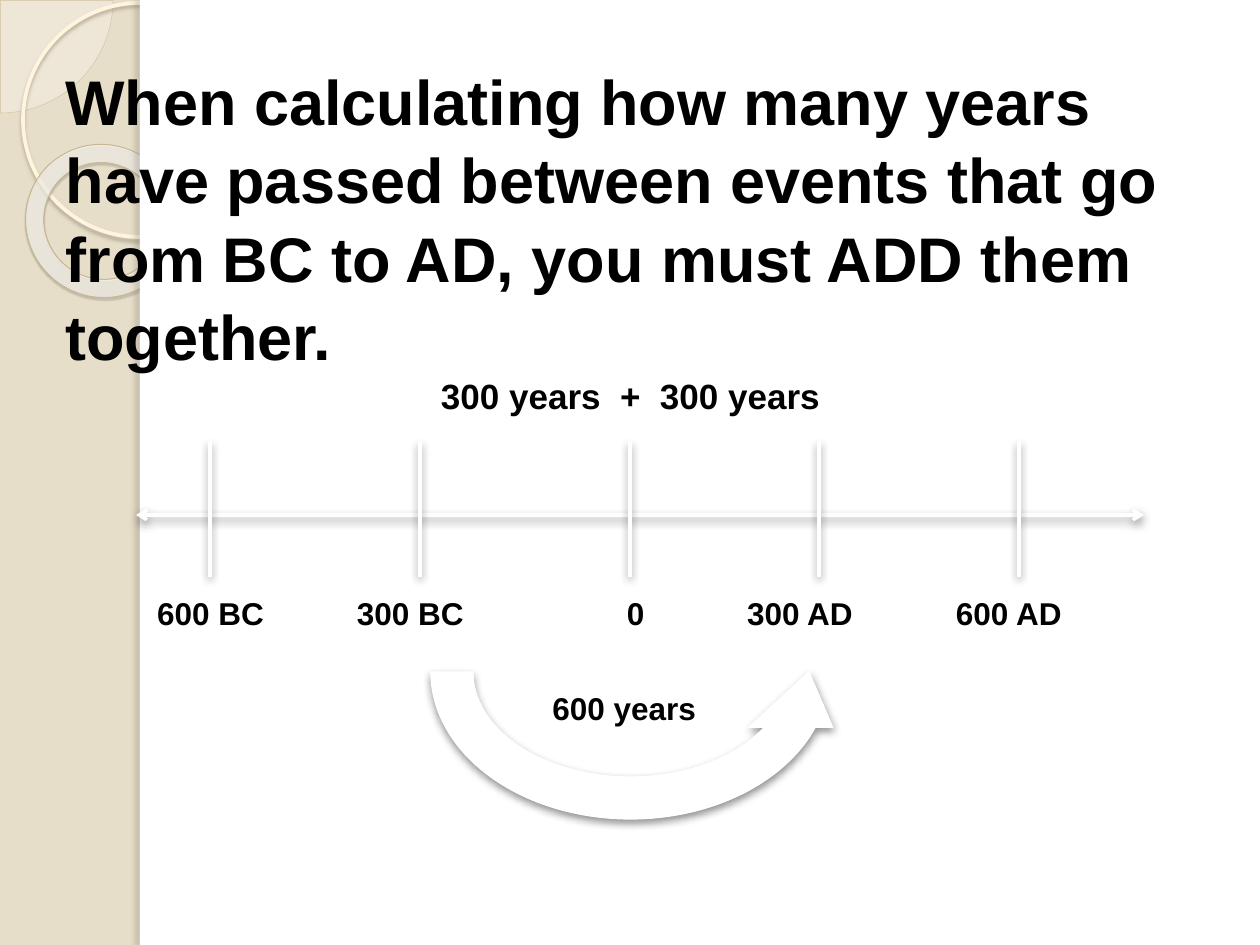
from dataclasses import dataclass
from lxml.etree import SubElement
from pptx import Presentation
from pptx.dml.color import RGBColor as RGB
from pptx.enum.shapes import MSO_CONNECTOR as CONN, MSO_SHAPE as SHAPE
from pptx.enum.text import MSO_ANCHOR as ANCHOR, PP_ALIGN as ALIGN
from pptx.oxml.ns import qn
from pptx.util import Pt

SCALE = 914400 / 126


def px(n):
    return round(n * SCALE)


@dataclass(frozen=True)
class Theme:
    font: str = "Arial"
    ink: str = "000000"
    white: str = "FFFFFF"
    sand: str = "E7DEC9"
    pie: str = "FEFAF4"
    pie_line: str = "D3C39F"
    ring: str = "FFF5DE"
    donut_line: str = "C7B893"
    donut_stops: tuple = ((0, "FFFCF6", 70), (70, "FFFEFB", 55), (100, "F0D28E", 60))
    soft: tuple = ("000000", 43, 5, 2, 90)
    ring_shadow: tuple = ("B0A68F", 85, 2, 2, 90)
    donut_shadow: tuple = ("5A5444", 35, 1, 1.2, 75)
    panel_shadow: tuple = ("736F63", 25, 3, 3, 180)
    title: int = 36
    total: int = 20
    label: int = 18


def add_xml(parent, tag, **attrs):
    return SubElement(parent, qn(tag), {k: str(v) for k, v in attrs.items()})


def add_color(parent, color, alpha):
    clr = add_xml(parent, "a:srgbClr", val=color)
    add_xml(clr, "a:alpha", val=alpha * 1000)


class Deck:
    def __init__(self, theme):
        self.t = theme
        self.prs = Presentation()
        self.prs.slide_width, self.prs.slide_height = px(1260), px(945)
        self.s = self.prs.slides.add_slide(self.prs.slide_layouts[5])
        fill = self.s.background.fill
        fill.solid()
        fill.fore_color.rgb = RGB.from_string(theme.sand)

    def shadow(self, sp, style):
        spPr = sp._element.spPr
        effects = spPr.find(qn("a:effectLst"))
        if effects is None:
            effects = add_xml(spPr, "a:effectLst")
        if style:
            color, alpha, blur, dist, angle = style
            outer = add_xml(effects, "a:outerShdw", blurRad=Pt(blur), dist=Pt(dist),
                            dir=angle * 60000, algn="ctr", rotWithShape=0)
            add_color(outer, color, alpha)

    def shape(self, kind, box, fill=None, alpha=100, line=None, width=0, shadow=None, adj=()):
        sp = self.s.shapes.add_shape(kind, *map(px, box))
        for i, value in enumerate(adj):
            sp.adjustments[i] = value
        if fill:
            sp.fill.solid()
            sp.fill.fore_color.rgb = RGB.from_string(fill)
            if alpha < 100:
                clr = sp._element.spPr.find(qn("a:solidFill"))[0]
                add_xml(clr, "a:alpha", val=alpha * 1000)
        else:
            sp.fill.background()
        if line:
            sp.line.color.rgb = RGB.from_string(line)
            sp.line.width = Pt(width)
        else:
            sp.line.fill.background()
        sp.shadow.inherit = False
        self.shadow(sp, shadow)
        return sp

    def radial(self, sp, stops, rect):
        spPr = sp._element.spPr
        grad = add_xml(spPr, "a:gradFill", rotWithShape=1)
        gs_list = add_xml(grad, "a:gsLst")
        for pos, color, alpha in stops:
            add_color(add_xml(gs_list, "a:gs", pos=pos * 1000), color, alpha)
        way = add_xml(grad, "a:path", path="circle")
        add_xml(way, "a:fillToRect", **{k: v * 1000 for k, v in zip("ltrb", rect)})
        spPr.replace(spPr.find(qn("a:noFill")), grad)

    def line(self, x1, y1, x2, y2, arrows=False):
        c = self.s.shapes.add_connector(CONN.STRAIGHT, *map(px, (x1, y1, x2, y2)))
        c.line.color.rgb = RGB.from_string(self.t.white)
        c.line.width = Pt(2)
        if arrows:
            ln = c._element.spPr.find(qn("a:ln"))
            for end in ("a:headEnd", "a:tailEnd"):
                add_xml(ln, end, type="arrow")
        self.shadow(c, self.t.soft)

    def add_text(self, tf, text, size, align):
        tf.word_wrap = True
        tf.vertical_anchor = ANCHOR.TOP
        p = tf.paragraphs[0]
        p.alignment = align
        r = p.add_run()
        r.text = text
        r.font.name, r.font.size, r.font.bold = self.t.font, Pt(size), True
        r.font.color.rgb = RGB.from_string(self.t.ink)
        return p

    def text(self, box, text, size, align=ALIGN.LEFT, inset=12):
        sp = self.s.shapes.add_textbox(*map(px, box))
        sp.text_frame.margin_left = px(inset)
        self.add_text(sp.text_frame, text, size, align)

    def title(self, box, text):
        sp = self.s.shapes.title
        sp.left, sp.top, sp.width, sp.height = map(px, box)
        p = self.add_text(sp.text_frame, text, self.t.title, ALIGN.LEFT)
        p.line_spacing = 1.04
        self.s.shapes._spTree.append(sp._element)


def main():
    t = Theme()
    d = Deck(t)

    d.shape(SHAPE.PIE, (-112, -112, 225, 225), t.pie, 33, t.pie_line, 0.25, adj=(0, 54))
    d.shape(SHAPE.OVAL, (23, 3, 234, 234), line=t.ring, width=2.15, shadow=t.ring_shadow)
    donut = d.shape(SHAPE.DONUT, (25, 145, 155, 152), line=t.donut_line, width=0.58,
                    shadow=t.donut_shadow, adj=(0.12,))
    donut.rotation = 38.6
    d.radial(donut, t.donut_stops, (-408, -50, 508, 150))
    d.shape(SHAPE.RECTANGLE, (140, 0, 1120, 945), t.white)
    d.shape(SHAPE.RECTANGLE, (140, 0, 10, 945), t.white, shadow=t.panel_shadow)

    d.title((53, 53, 1155, 318),
            "When calculating how many years have passed between events that go "
            "from BC to AD, you must ADD them together.")

    d.line(136, 515, 1144, 515, arrows=True)
    marks = (
        (210, "600 BC", 136, 168, 21),
        (420, "300 BC", 336, 168, 21),
        (630, "0", 588, 105, 39),
        (819, "300 AD", 735, 168, 12),
        (1019, "600 AD", 935, 168, 21),
    )
    for x, label, left, width, inset in marks:
        d.line(x, 441, x, 577)
        d.text((left, 588, width, 53), label, t.label, inset=inset)

    arrow = d.shape(SHAPE.CIRCULAR_ARROW, (410, 504, 441, 336), t.white, line=t.white,
                    width=0.75, shadow=t.soft)
    arrow._element.spPr.xfrm.set("flipV", "1")
    d.text((315, 368, 766, 55), "300 years  +  300 years", t.total, inset=126)
    d.text((525, 683, 199, 50), "600 years", t.label, ALIGN.CENTER)

    d.prs.save("out.pptx")


if __name__ == "__main__":
    main()
